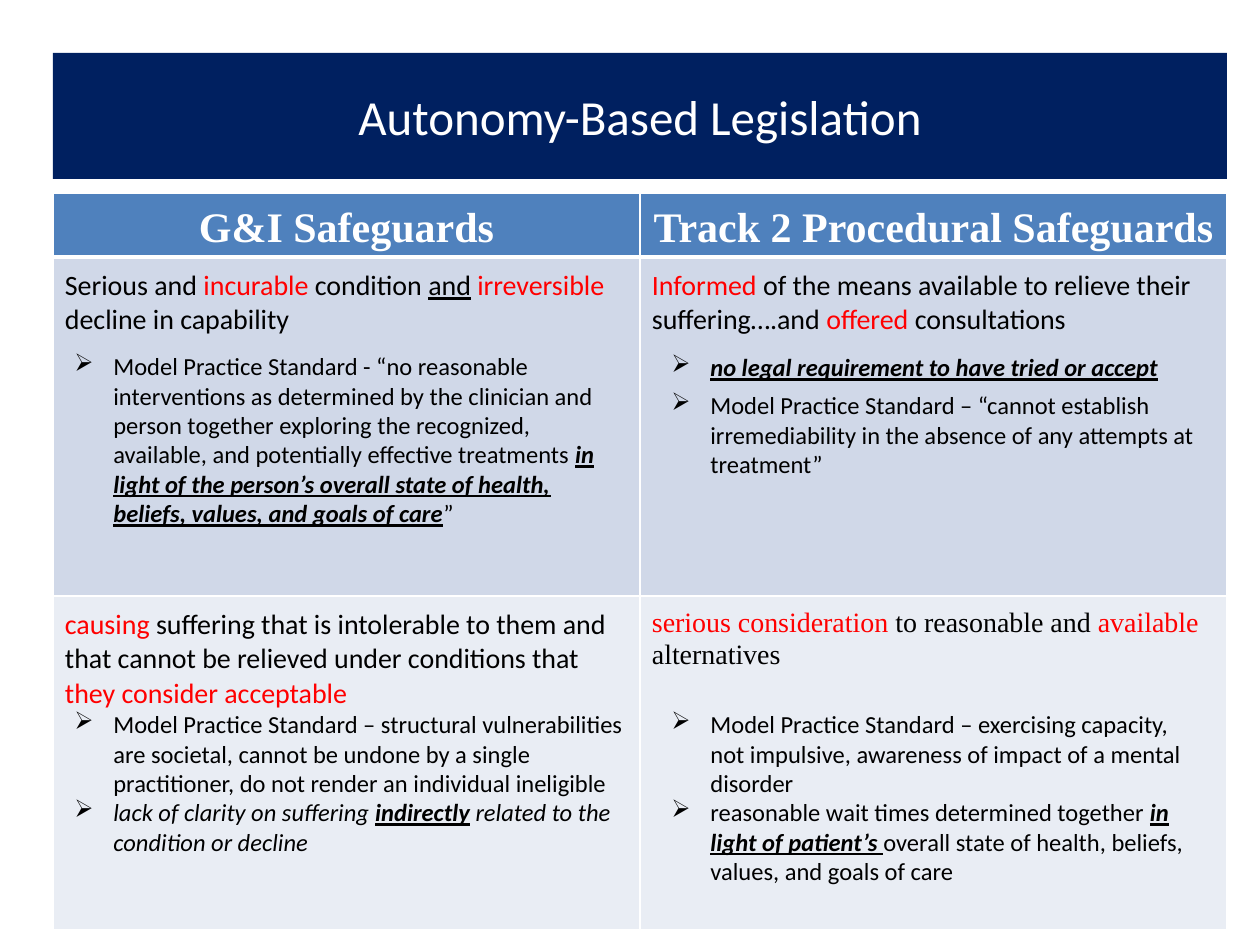
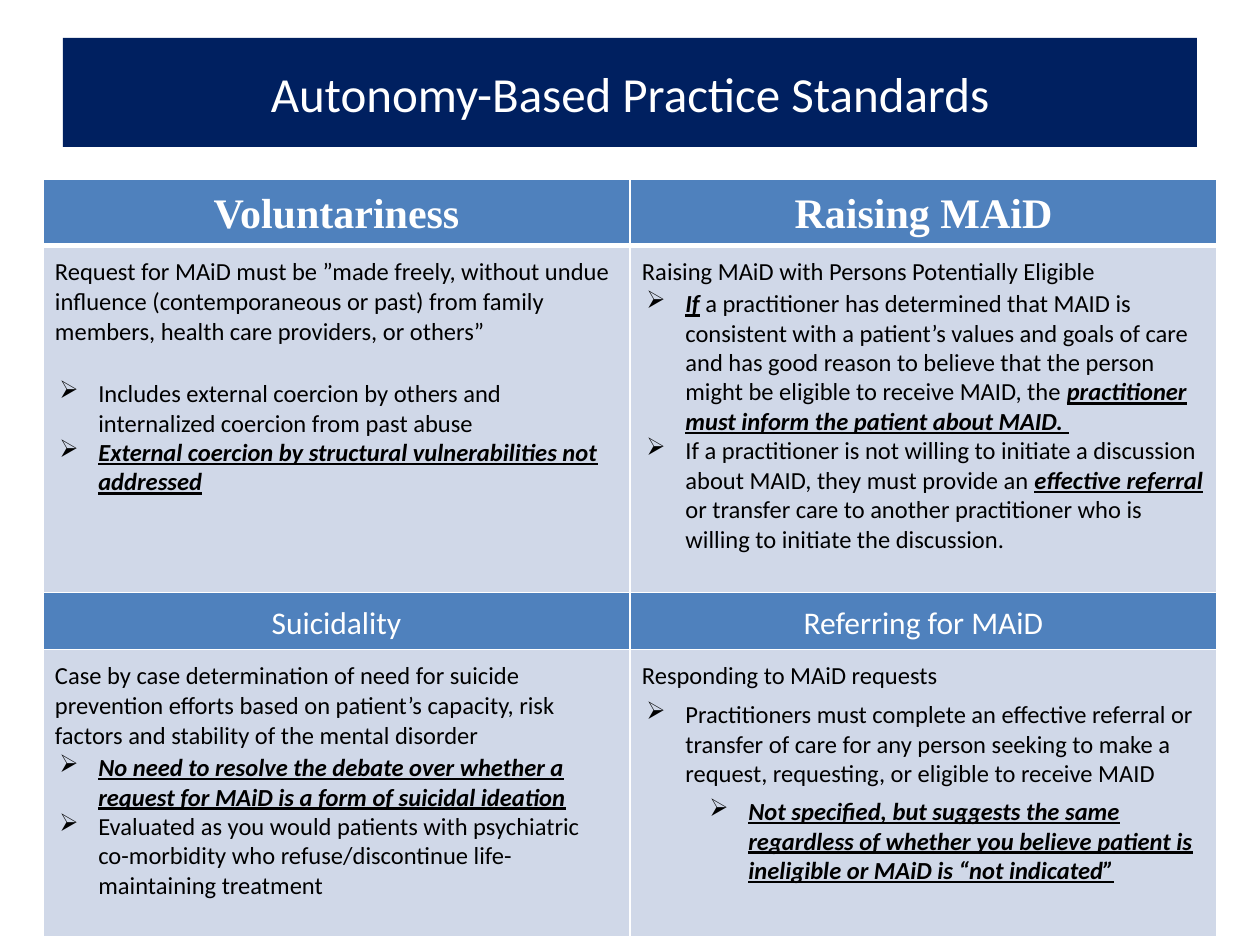
from dataclasses import dataclass

from lxml import etree
from pptx import Presentation
from pptx.dml.color import RGBColor
from pptx.enum.shapes import MSO_SHAPE
from pptx.enum.text import MSO_ANCHOR, MSO_AUTO_SIZE, PP_ALIGN
from pptx.oxml.ns import qn
from pptx.util import Emu, Pt

RECTANGLE = MSO_SHAPE.RECTANGLE
MIDDLE = MSO_ANCHOR.MIDDLE
GROW = MSO_AUTO_SIZE.SHAPE_TO_FIT_TEXT
CENTER, LEFT = PP_ALIGN.CENTER, PP_ALIGN.LEFT

PX = 914400 / 126
COLORS = {
    "navy": "002060",
    "blue": "4F81BD",
    "pale": "D0D8E8",
    "paler": "E9EDF4",
    "white": "FFFFFF",
    "black": "000000",
    "red": "FF0000",
}
SANS, SERIF = "Calibri", "Times New Roman"
STRONG = {"bold": True, "italic": True, "underline": True}
RED = {"color": "red"}
ITALIC = {"italic": True}
UNDERLINE = {"underline": True}
COLUMN_WIDTH = 587
CELL_MARGINS = {"margin_left": 12, "margin_right": 12, "margin_top": 12, "margin_bottom": 4}
HANGING = 39
LEVEL_STEP = 63


@dataclass(frozen=True)
class Run:
    text: str
    style: dict | None = None


@dataclass(frozen=True)
class TextStyle:
    size: int
    font: str = SANS
    color: str = "black"
    bold: bool = False
    align: PP_ALIGN = LEFT


@dataclass(frozen=True)
class Bullet:
    runs: list[Run]
    level: int = 0
    space_after: int = 0


@dataclass(frozen=True)
class BulletBox:
    left: int
    top: int
    width: int
    height: int
    bullets: list[Bullet]


@dataclass(frozen=True)
class Cell:
    runs: list[Run]
    style: TextStyle


@dataclass(frozen=True)
class Row:
    height: int
    fill: str
    cells: list[Cell]


@dataclass(frozen=True)
class SafeguardSlide:
    title: str
    title_box: tuple[int, int, int, int]
    table_corner: tuple[int, int]
    rows: list[Row]
    bullet_boxes: list[BulletBox]


TITLE = TextStyle(28, color="white", align=CENTER)
HEADER = TextStyle(24, SERIF, "white", True, CENTER)
SUBHEADER = TextStyle(18, color="white", align=CENTER)
LEAD = TextStyle(16)
LEAD_SERIF = TextStyle(16, SERIF)
BODY = TextStyle(14)


def px(length: int) -> Emu:
    return Emu(round(length * PX))


def rgb(name: str) -> RGBColor:
    return RGBColor.from_string(COLORS[name])


def plain_cells(style: TextStyle, *texts: str) -> list[Cell]:
    return [Cell([Run(text)], style) for text in texts]


def write_runs(paragraph, runs: list[Run], style: TextStyle) -> None:
    paragraph.alignment = style.align
    for item in runs:
        values = {"name": style.font, "size": Pt(style.size), "bold": style.bold,
                  "color": style.color} | (item.style or {})
        color = values.pop("color")
        run = paragraph.add_run()
        run.text = item.text
        for name, value in values.items():
            setattr(run.font, name, value)
        run.font.color.rgb = rgb(color)


def add_title(slide, text: str, box: tuple[int, int, int, int]) -> None:
    shape = slide.shapes.add_shape(RECTANGLE, *map(px, box))
    shape.shadow.inherit = False
    shape.fill.solid()
    shape.fill.fore_color.rgb = rgb("navy")
    shape.line.fill.background()
    shape.text_frame.word_wrap = True
    shape.text_frame.vertical_anchor = MIDDLE
    write_runs(shape.text_frame.paragraphs[0], [Run(text)], TITLE)


def add_borders(cell, top: int, bottom: int) -> None:
    """Draw white cell edges; top and bottom are line widths in points."""
    properties = cell._tc.get_or_add_tcPr()
    for side, width in {"L": 1, "R": 1, "T": top, "B": bottom}.items():
        line = etree.SubElement(properties, qn(f"a:ln{side}"), w=str(Pt(width)))
        fill = etree.SubElement(line, qn("a:solidFill"))
        etree.SubElement(fill, qn("a:srgbClr"), val=COLORS["white"])


def add_table(slide, corner: tuple[int, int], rows: list[Row]) -> None:
    columns = len(rows[0].cells)
    size = (columns * COLUMN_WIDTH, sum(row.height for row in rows))
    table = slide.shapes.add_table(len(rows), columns, *map(px, corner + size)).table
    table.first_row = table.horz_banding = False
    for column in table.columns:
        column.width = px(COLUMN_WIDTH)
    for row_index, row in enumerate(rows):
        table.rows[row_index].height = px(row.height)
        for column_index, content in enumerate(row.cells):
            cell = table.cell(row_index, column_index)
            for name, margin in CELL_MARGINS.items():
                setattr(cell, name, px(margin))
            add_borders(cell, 3 if row_index == 1 else 1, 3 if row_index == 0 else 1)
            cell.fill.solid()
            cell.fill.fore_color.rgb = rgb(row.fill)
            write_runs(cell.text_frame.paragraphs[0], content.runs, content.style)


def add_bullet_box(slide, box: BulletBox) -> None:
    shape = slide.shapes.add_textbox(*map(px, (box.left, box.top, box.width, box.height)))
    frame = shape.text_frame
    frame.word_wrap = True
    frame.auto_size = GROW
    for index, bullet in enumerate(box.bullets):
        paragraph = frame.add_paragraph() if index else frame.paragraphs[0]
        properties = paragraph._p.get_or_add_pPr()
        properties.set("marL", str(px(HANGING + bullet.level * LEVEL_STEP)))
        properties.set("indent", str(-px(HANGING)))
        etree.SubElement(properties, qn("a:buChar"), char="➢")
        paragraph.level = bullet.level
        paragraph.space_after = Pt(bullet.space_after)
        write_runs(paragraph, bullet.runs, BODY)


LEGISLATION = SafeguardSlide(
    "Autonomy-Based Legislation", (53, 53, 1174, 126), (53, 193),
    [
        Row(64, "blue", plain_cells(HEADER, "G&I Safeguards", "Track 2 Procedural Safeguards")),
        Row(339, "pale", [
            Cell([Run("Serious and "), Run("incurable", RED), Run(" condition "),
                  Run("and", UNDERLINE), Run(" "), Run("irreversible", RED),
                  Run(" decline in capability")], LEAD),
            Cell([Run("Informed", RED),
                  Run(" of the means available to relieve their suffering….and "),
                  Run("offered", RED), Run(" consultations")], LEAD),
        ]),
        Row(334, "paler", [
            Cell([Run("causing", RED),
                  Run(" suffering that is intolerable to them and that cannot be relieved "
                      "under conditions that "),
                  Run("they consider acceptable", RED)], LEAD),
            Cell([Run("serious consideration ", RED), Run("to reasonable and "),
                  Run("available", RED), Run(" alternatives")], LEAD_SERIF),
        ]),
    ],
    [
        BulletBox(62, 345, 577, 190, [
            Bullet([Run("Model Practice Standard - “no reasonable interventions as determined by "
                        "the clinician and person together exploring the recognized, available, "
                        "and potentially effective treatments "),
                    Run("in light of the person’s overall state of health, beliefs, values, "
                        "and goals of care", STRONG), Run("”")]),
        ]),
        BulletBox(62, 703, 577, 161, [
            Bullet([Run("Model Practice Standard – structural vulnerabilities are societal, "
                        "cannot be undone by a single practitioner, do not render an "
                        "individual ineligible")]),
            Bullet([Run("lack of clarity on suffering ", ITALIC), Run("indirectly", STRONG),
                    Run(" related to the condition or decline", ITALIC)]),
        ]),
        BulletBox(659, 346, 568, 140, [
            Bullet([Run("no legal requirement to have tried or accept", STRONG)], space_after=5),
            Bullet([Run("Model Practice Standard – “cannot establish irremediability in the "
                        "absence of any attempts at treatment”")], space_after=5),
        ]),
        BulletBox(659, 703, 547, 190, [
            Bullet([Run("Model Practice Standard – exercising capacity, not impulsive, "
                        "awareness of impact of a mental disorder")]),
            Bullet([Run("reasonable wait times determined together "),
                    Run("in light of patient’s ", STRONG),
                    Run("overall state of health, beliefs, values, and goals of care")]),
        ]),
    ],
)

PRACTICE_STANDARDS = SafeguardSlide(
    "Autonomy-Based Practice Standards", (63, 38, 1134, 109), (43, 179),
    [
        Row(64, "blue", plain_cells(HEADER, "Voluntariness", "Raising MAiD")),
        Row(347, "pale", plain_cells(
            BODY,
            "Request for MAiD must be ”made freely, without undue influence (contemporaneous "
            "or past) from family members, health care providers, or others”",
            "Raising MAiD with Persons Potentially Eligible")),
        Row(57, "blue", plain_cells(SUBHEADER, "Suicidality", "Referring for MAiD")),
        Row(287, "pale", plain_cells(
            BODY,
            "Case by case determination of need for suicide prevention efforts based on "
            "patient’s capacity, risk factors and stability of the mental disorder",
            "Responding to MAiD requests")),
    ],
    [
        BulletBox(47, 372, 564, 131, [
            Bullet([Run("Includes external coercion by others and internalized coercion "
                        "from past abuse")]),
            Bullet([Run("External coercion by structural vulnerabilities not addressed", STRONG)]),
        ]),
        BulletBox(47, 746, 577, 161, [
            Bullet([Run("No need to resolve the debate over whether a request for MAiD is "
                        "a form of suicidal ideation", STRONG)]),
            Bullet([Run("Evaluated as you would patients with psychiatric co-morbidity who "
                        "refuse/discontinue life-maintaining treatment")]),
        ]),
        BulletBox(634, 282, 587, 280, [
            Bullet([Run("If", STRONG),
                    Run(" a practitioner has determined that MAID is consistent with a patient’s "
                        "values and goals of care and has good reason to believe that the person "
                        "might be eligible to receive MAID, the "),
                    Run("practitioner must inform the patient about MAID. ", STRONG)]),
            Bullet([Run("If a practitioner is not willing to initiate a discussion about MAID, "
                        "they must provide an "),
                    Run("effective referral ", STRONG),
                    Run("or transfer care to another practitioner who is willing to initiate "
                        "the discussion.")]),
        ]),
        BulletBox(634, 693, 577, 199, [
            Bullet([Run("Practitioners must complete an effective referral or transfer of care "
                        "for any person seeking to make a request, requesting, or eligible to "
                        "receive MAID")], space_after=5),
            Bullet([Run("Not specified, but suggests the same regardless of whether you believe "
                        "patient is ineligible or MAiD is “not indicated”", STRONG)], level=1),
        ]),
    ],
)


def main() -> None:
    presentation = Presentation()
    presentation.slide_width, presentation.slide_height = px(1260), px(945)
    for content in (LEGISLATION, PRACTICE_STANDARDS):
        slide = presentation.slides.add_slide(presentation.slide_layouts[6])
        add_title(slide, content.title, content.title_box)
        add_table(slide, content.table_corner, content.rows)
        for box in content.bullet_boxes:
            add_bullet_box(slide, box)
    presentation.save("out.pptx")


if __name__ == "__main__":
    main()
